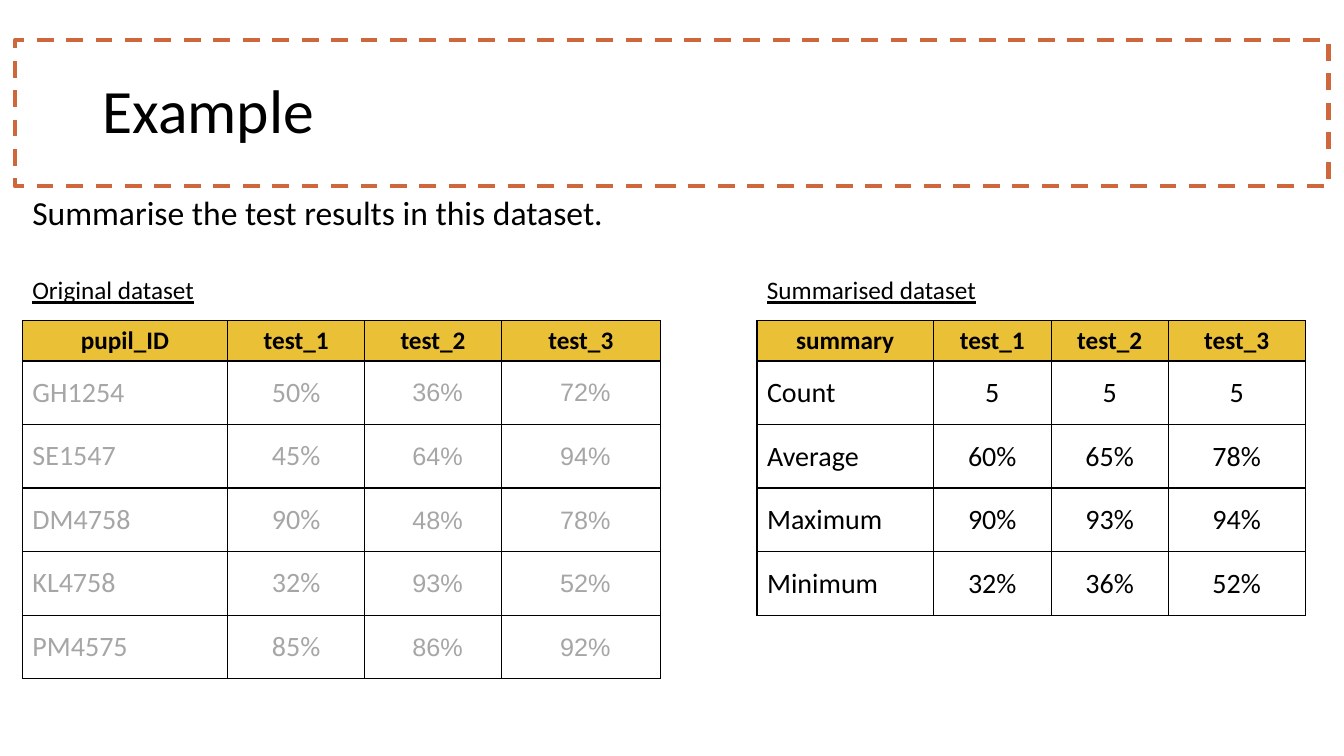
"""Build the example slide that summarises a dataset of test results."""
from lxml.etree import SubElement
from pptx import Presentation
from pptx.dml.color import RGBColor
from pptx.enum.dml import MSO_LINE
from pptx.enum.shapes import MSO_SHAPE
from pptx.enum.text import MSO_ANCHOR as Anchor, PP_ALIGN as Align
from pptx.oxml import parse_xml
from pptx.oxml.ns import nsdecls, qn
from pptx.util import Pt

BLACK, GREY, GOLD, WHITE, ORANGE = "000000", "A6A6A6", "EAC036", "FFFFFF", "CE673B"


def rgb(value):
    return RGBColor.from_string(value)


def write(frame, text, color=BLACK, align=Align.LEFT, **formats):
    frame.text = text
    paragraph = frame.paragraphs[0]
    paragraph.alignment = align
    font = paragraph.runs[0].font
    font.color.rgb = rgb(color)
    for key, value in ({"name": "Calibri", "bold": False} | formats).items():
        setattr(font, key, value)


deck = Presentation()
deck.slide_width, deck.slide_height = Pt(960), Pt(540)
slide = deck.slides.add_slide(deck.slide_layouts[5])
shapes = slide.shapes

title = shapes.title
title.left, title.top, title.width, title.height = Pt(66), Pt(28.75), Pt(828), Pt(104.4)
write(title.text_frame, "Example", size=Pt(44))
title.text_frame.vertical_anchor = Anchor.MIDDLE
title.text_frame.paragraphs[0].line_spacing = 0.9

banner = shapes.add_shape(MSO_SHAPE.RECTANGLE, Pt(10.8), Pt(28.75), Pt(938.2), Pt(104.4))
banner.shadow.inherit = False
banner.fill.background()
banner.line.color.rgb = rgb(ORANGE)
banner.line.width = Pt(3)
banner.line.dash_style = MSO_LINE.DASH
title._element.addprevious(banner._element)

captions = [
    ("Summarise the test results in this dataset.", 16, 133.2, 654, 36, 24, False),
    ("Original dataset", 16, 192.5, 265, 29, 18, True),
    ("Summarised dataset", 540.7, 192.5, 265, 29, 18, True),
]
for text, left, top, width, height, size, underline in captions:
    caption = shapes.add_textbox(Pt(left), Pt(top), Pt(width), Pt(height))
    caption.text_frame.word_wrap = True
    write(caption.text_frame, text, size=Pt(size), underline=underline)

pupils = [
    ("pupil_ID", "test_1", "test_2", "test_3"),
    ("GH1254", "50%", "36%", "72%"),
    ("SE1547", "45%", "64%", "94%"),
    ("DM4758", "90%", "48%", "78%"),
    ("KL4758", "32%", "93%", "52%"),
    ("PM4575", "85%", "86%", "92%"),
]
summary = [
    ("summary", "test_1", "test_2", "test_3"),
    ("Count", "5", "5", "5"),
    ("Average", "60%", "65%", "78%"),
    ("Maximum", "90%", "93%", "94%"),
    ("Minimum", "32%", "36%", "52%"),
]
normal, tight, indented = (7.2, 3.6, 7.2, 3.6), (0.7, 0.7, 0.7, 0), (7.2, 0.7, 0.7, 0)
calibri, arial = {"size": Pt(20)}, {"size": Pt(18), "name": "Arial"}
datasets = [
    (pupils, 16, (146.6, 98, 97.5, 113.7), GREY,
     (normal, normal, indented, indented), (calibri, calibri, arial, arial)),
    (summary, 540.7, (126, 84.2, 83.5, 97.9), BLACK,
     (indented, tight, tight, tight), (calibri,) * 4),
]
for records, left, widths, color, insets, fonts in datasets:
    height = 28.8 + 45.4 * (len(records) - 1)
    table = shapes.add_table(len(records), len(widths), Pt(left), Pt(229),
                             Pt(sum(widths)), Pt(height)).table
    for column, width in zip(table.columns, widths):
        column.width = Pt(width)
    for r, record in enumerate(records):
        table.rows[r].height = Pt(45.4 if r else 28.5)
        for c, text in enumerate(record):
            cell = table.cell(r, c)
            margins = insets[c] if r else normal
            for side, margin in zip(("left", "top", "right", "bottom"), margins):
                setattr(cell, f"margin_{side}", Pt(margin))
            cell.vertical_anchor = Anchor.MIDDLE
            for edge in ("lnL", "lnR", "lnT", "lnB"):
                border = parse_xml(f'<a:{edge} {nsdecls("a")} w="12700"/>')
                paint = SubElement(border, qn("a:solidFill"))
                SubElement(paint, qn("a:srgbClr"), val=BLACK)
                cell._tc.get_or_add_tcPr().append(border)
            if r and c == 0:
                cell.fill.background()
            else:
                cell.fill.solid()
                cell.fill.fore_color.rgb = rgb(WHITE if r else GOLD)
            align = Align.LEFT if r and c == 0 else Align.CENTER
            if r:
                write(cell.text_frame, text, color, align, **fonts[c])
            else:
                write(cell.text_frame, text, align=align, size=Pt(18), bold=True)

deck.save("out.pptx")
